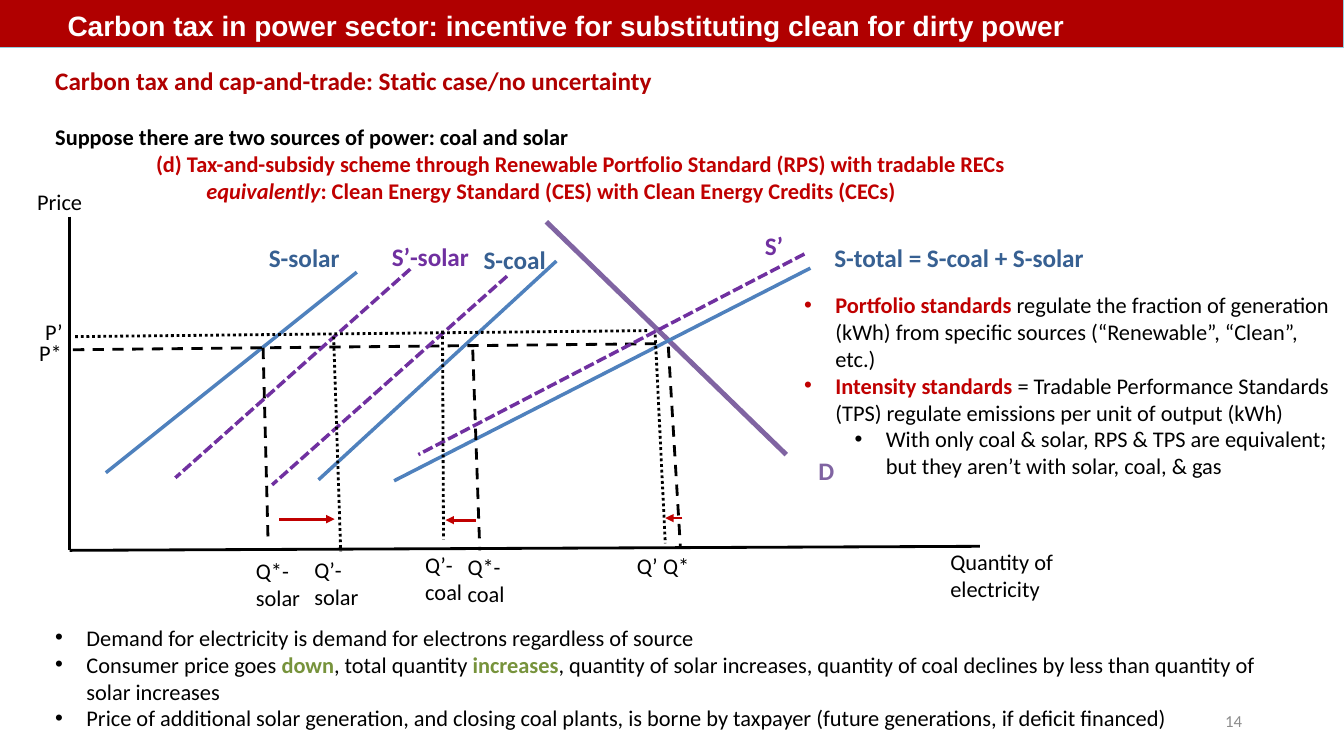
import pptx
import pptx.dml.color
import pptx.enum.dml
import pptx.enum.shapes
import pptx.enum.text
import pptx.oxml.ns
import pptx.util
import lxml.etree

# Grid: square cells of a tenth of an inch; places are (column, row)
CELL = 0.1
COLS, ROWS = 133.33, 75
RED, BRICK, BLACK, WHITE, GREY = "C00000", "B00000", "000000", "FFFFFF", "8C8C8C"
BLUE, NAVY, MAUVE, PURPLE, GREEN = "4F81BD", "376092", "8064A2", "7030A0", "77933C"

# Text content: paragraphs hold runs of (text, format)
TITLE = "Carbon tax in power sector: incentive for substituting clean for dirty power"
HEADING = [
    dict(runs=[("Carbon tax and cap-and-trade: Static case/no uncertainty", dict(size=18, color=BRICK))]),
    dict(runs=[("Suppose there are two sources of power: coal and solar", {})], before=19.5),
    dict(runs=[("(d) Tax-and-subsidy scheme through Renewable Portfolio Standard (RPS) "
                "with tradable RECs", dict(color=RED))], left=10),
    dict(runs=[("equivalently", dict(color=RED, italic=True)),
               (": Clean Energy Standard (CES) with Clean Energy Credits (CECs)", dict(color=RED))], left=15),
]
HIGHLIGHT, KEY = dict(color=GREEN, bold=True), dict(color=RED, bold=True)
FINDINGS = [
    dict(runs=[("Demand for electricity is demand for electrons regardless of source", {})]),
    dict(runs=[("Consumer price goes ", {}), ("down", HIGHLIGHT), (", total quantity ", {}),
               ("increases", HIGHLIGHT),
               (", quantity of solar increases, quantity of coal declines by less than "
                "quantity of solar increases", {})]),
    dict(runs=[("Price of additional solar generation, and closing coal plants, is borne by "
                "taxpayer (future generations, if deficit financed)", {})]),
]
STANDARDS = [
    dict(runs=[("Portfolio standards", KEY),
               (" regulate the fraction of generation (kWh) from specific sources "
                "(“Renewable”, “Clean”, etc.)", {})]),
    dict(runs=[("Intensity standards ", KEY),
               ("= Tradable Performance Standards (TPS) regulate emissions per unit of output (kWh)", {})]),
    dict(runs=[("With only coal & solar, RPS & TPS are equivalent; but they aren’t with "
                "solar, coal, & gas", {})], level=1),
]

# Diagram: each style lists its segments as (from column, from row, to column, to row)
SHIFTED = (-23.3, 20.7)  # run and rise shared by the two shifted supply curves
LINES = [
    (dict(color=MAUVE, width=3.5), [(54.2, 22, 78, 45.1)]),
    (dict(color=BLACK, width=2), [(6.9, 21.5, 6.9, 54.6), (97.2, 54.2, 6.9, 54.6)]),
    (dict(color=BLUE, width=2.5), [(55.2, 25.9, 31.6, 47.6), (35.4, 27, 10.5, 46.9),
                                   (80.4, 26.6, 39.1, 47.7)]),
    (dict(color=BLACK, width=2, dash="DASH"), [(65.1, 34.1, 7.2, 34.7), (66.3, 34.4, 67.5, 54.3),
                                               (46.9, 34.7, 47.6, 54.6), (26.1, 34.5, 26.6, 53.9)]),
    (dict(color=PURPLE, width=2.5, dash="SQUARE_DOT"),
     [(79.8, 25.2, 41.5, 45.1)] + [(x, y, x + SHIFTED[0], y + SHIFTED[1])
                                   for x, y in ((40.7, 26.7), (50.3, 27.4))]),
    (dict(color=BLACK, width=2, dash="ROUND_DOT"), [(64.2, 32.8, 7.2, 33.4), (65, 33.2, 66, 53.9),
                                                    (33.1, 33.4, 33.8, 54.7), (43.9, 32.8, 44, 53.5)]),
    (dict(color=RED, width=2, arrow=True), [(27.7, 51.5, 33.2, 51.5), (47.2, 51.6, 44.2, 51.6),
                                            (67.7, 51.4, 66, 51.4)]),
]
# Labels: (text, column, row, columns wide)
CURVE_LABELS = [
    (NAVY, [("S-coal", 47, 23.7, 10), ("S-solar", 25.7, 23.6, 10),
            ("S-total = S-coal + S-solar", 81.8, 23.6, 27.3)]),
    (PURPLE, [("S’", 74.9, 22.4, 9), ("S’-solar", 37.9, 23.4, 10)]),
    (MAUVE, [("D", 80.2, 44.7, 12.7)]),
]
AXIS_LABELS = [
    ("Price", 2.7, 18.2, 8.7), ("P’", 3.5, 31.1, 6.4), ("P*", 2.9, 33.2, 6.4),
    ("Q’", 62.2, 54.3, 5.5), ("Q*", 64.8, 54.3, 5.5),
    ("Q*-coal", 45.4, 54.4, 6.9), ("Q’-coal", 41.2, 54.2, 7.2),
    ("Q*-solar", 24.4, 54.8, 7.2), ("Q’-solar", 30.2, 54.7, 7.2),
    ("Quantity of electricity", 93.3, 53.9, 20.4),
]


def grid(n):
    return pptx.util.Inches(n * CELL)


def rgb(code):
    return pptx.dml.color.RGBColor.from_string(code)


def add_xml(parent, tag, **attrs):
    el = lxml.etree.SubElement(parent, pptx.oxml.ns.qn(tag))
    for name, value in attrs.items():
        el.set(name, value)
    return el


def write(p, text, size=16, color=BLACK, bold=False, italic=False, font="Calibri"):
    r = p.add_run()
    r.text = text
    f = r.font
    f.name, f.size, f.bold, f.italic = font, pptx.util.Pt(size), bold, italic
    f.color.rgb = rgb(color)


def text_box(left, top, width, height, paragraphs, bullets=False, **fmt):
    tf = slide.shapes.add_textbox(grid(left), grid(top), grid(width), grid(height)).text_frame
    tf.word_wrap = True
    for i, para in enumerate(paragraphs):
        p = tf.add_paragraph() if i else tf.paragraphs[0]
        p.level = para.get("level", 0)
        p.space_before = pptx.util.Pt(para.get("before", 0))
        indent = 3.1 + 5 * p.level if bullets else para.get("left", 0)
        pPr = p._p.get_or_add_pPr()
        pPr.set("marL", str(grid(indent)))
        if bullets:
            pPr.set("indent", str(grid(-3.1)))
            add_xml(pPr, "a:buFont", typeface="Arial")
            add_xml(pPr, "a:buChar", char="•")
        for text, run_fmt in para["runs"]:
            write(p, text, **{**fmt, **run_fmt})
    return tf


def line(x1, y1, x2, y2, color, width, dash=None, arrow=False):
    c = slide.shapes.add_connector(pptx.enum.shapes.MSO_CONNECTOR.STRAIGHT,
                                   grid(x1), grid(y1), grid(x2), grid(y2))
    c.line.color.rgb = rgb(color)
    c.line.width = pptx.util.Pt(width)
    if dash:
        c.line.dash_style = pptx.enum.dml.MSO_LINE[dash]
    if arrow:
        add_xml(c.line._get_or_add_ln(), "a:tailEnd", type="triangle")
    add_xml(c._element.spPr, "a:effectLst")


prs = pptx.Presentation()
prs.slide_width, prs.slide_height = grid(COLS), grid(ROWS)
slide = prs.slides.add_slide(prs.slide_layouts[6])

# Title band
band = slide.shapes.add_shape(pptx.enum.shapes.MSO_SHAPE.RECTANGLE, 0, 0, grid(COLS), grid(4.7))
band.shadow.inherit = False
band.fill.solid()
band.fill.fore_color.rgb = rgb(BRICK)
band.line.color.rgb = rgb("93CDDD")
band.line.width = 0
tf = band.text_frame
tf.margin_left = grid(6.7)
tf.vertical_anchor = pptx.enum.text.MSO_ANCHOR.BOTTOM
tf.paragraphs[0].alignment = pptx.enum.text.PP_ALIGN.LEFT
write(tf.paragraphs[0], TITLE, size=20, color=WHITE, bold=True, font="Arial")

# Heading and page number
text_box(4.5, 6, 110, 14.8, HEADING, bold=True)
tf = text_box(94.2, 69.5, 30, 4, [dict(runs=[("14", dict(size=12, color=GREY))])])
tf.vertical_anchor = pptx.enum.text.MSO_ANCHOR.MIDDLE
tf.paragraphs[0].alignment = pptx.enum.text.PP_ALIGN.RIGHT

# Supply and demand diagram
for style, segments in LINES:
    for segment in segments:
        line(*segment, **style)
for color, labels in CURVE_LABELS:
    for text, left, top, width in labels:
        text_box(left, top, width, 4, [dict(runs=[(text, {})])], size=18, color=color, bold=True)
for text, left, top, width in AXIS_LABELS:
    height = 6.4 if len(text) > 5 else 3.7
    text_box(left, top, width, height, [dict(runs=[(text, {})])])

# Bulleted notes
text_box(4.5, 61.4, 122.4, 11.8, FINDINGS, bullets=True)
text_box(78.8, 28.4, 54.5, 19.9, STANDARDS, bullets=True)

prs.save("out.pptx")
